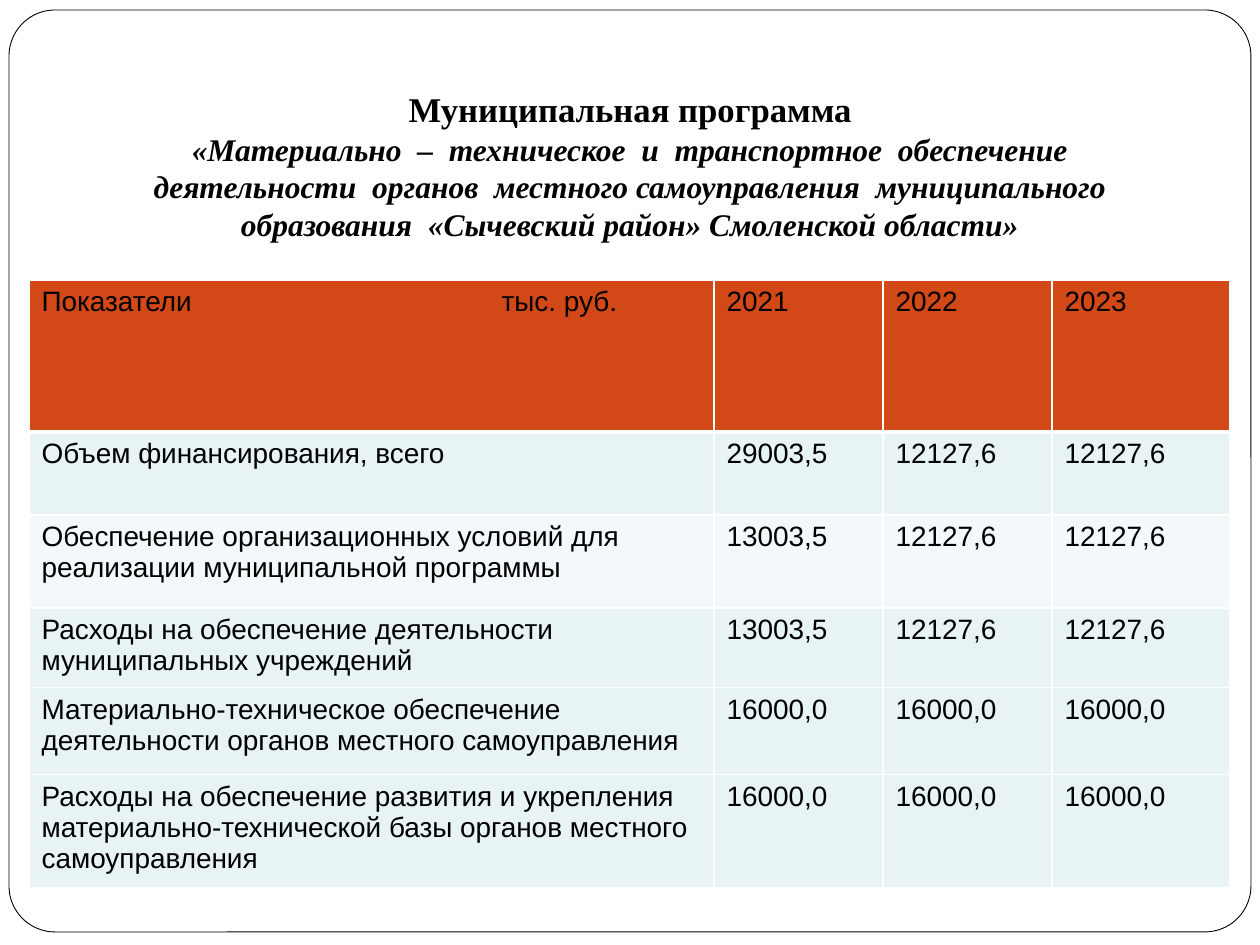
from lxml import etree
from pptx import Presentation
from pptx.dml.color import RGBColor
from pptx.enum.shapes import MSO_SHAPE
from pptx.enum.text import MSO_ANCHOR, PP_ALIGN
from pptx.oxml.ns import qn
from pptx.util import Emu, Pt

ROUNDED = MSO_SHAPE.ROUNDED_RECTANGLE
BOTTOM = MSO_ANCHOR.BOTTOM
CENTER = PP_ALIGN.CENTER

PX_PER_INCH = 126
BLACK = RGBColor(0x00, 0x00, 0x00)
WHITE = RGBColor(0xFF, 0xFF, 0xFF)
ORANGE = RGBColor(0xD3, 0x48, 0x17)
BAND = RGBColor(0xE7, 0xF3, 0xF4)
BAND_LIGHT = RGBColor(0xF3, 0xF9, 0xFA)

TITLE_LINES = [
    "Муниципальная программа",
    "«Материально  –  техническое  и  транспортное  обеспечение",
    "деятельности  органов  местного самоуправления  муниципального",
    "образования  «Сычевский район» Смоленской области»",
]

COLUMN_WIDTHS = [685, 169, 169, 178]
UNIT_TAB = 460
# Row height, fill, cell texts
BUDGET_ROWS = [
    (152, ORANGE, ["Показатели\tтыс. руб.", "2021", "2022", "2023"]),
    (83, BAND, ["Объем финансирования, всего",
                "29003,5", "12127,6", "12127,6"]),
    (93, BAND_LIGHT, ["Обеспечение организационных условий для реализации "
                      "муниципальной программы",
                      "13003,5", "12127,6", "12127,6"]),
    (79, BAND, ["Расходы на обеспечение деятельности муниципальных учреждений",
                "13003,5", "12127,6", "12127,6"]),
    (87, BAND, ["Материально-техническое обеспечение деятельности органов "
                "местного самоуправления",
                "16000,0", "16000,0", "16000,0"]),
    (108, BAND, ["Расходы на обеспечение развития и укрепления "
                 "материально-технической базы органов местного "
                 "самоуправления",
                 "16000,0", "16000,0", "16000,0"]),
]


def px(length):
    return Emu(round(length * 914400 / PX_PER_INCH))


def style_run(run, font_name, size, bold=False, italic=False):
    run.font.name = font_name
    run.font.size = Pt(size)
    run.font.bold = bold
    run.font.italic = italic
    run.font.color.rgb = BLACK


def add_frame(slide):
    frame = slide.shapes.add_shape(ROUNDED, px(9), px(10), px(1242), px(922))
    frame.adjustments[0] = 0.05
    frame.shadow.inherit = False
    frame.fill.solid()
    frame.fill.fore_color.rgb = WHITE
    frame.line.color.rgb = BLACK
    frame.line.width = Pt(0.5)


def add_title(slide):
    title = slide.shapes.add_textbox(px(63), px(38), px(1134), px(218))
    text_frame = title.text_frame
    text_frame.word_wrap = True
    text_frame.vertical_anchor = BOTTOM
    text_frame.margin_bottom = px(13)
    text_frame.text = "\n".join(TITLE_LINES)
    for index, paragraph in enumerate(text_frame.paragraphs):
        paragraph.alignment = CENTER
        is_subject = index > 0
        style_run(paragraph.runs[0], "Times New Roman",
                  18 if is_subject else 19.8, bold=True, italic=is_subject)


def set_borders(cell, widths):
    properties = cell._tc.get_or_add_tcPr()
    for position, (side, width) in enumerate(widths.items()):
        border = etree.Element(qn(f"a:{side}"), w=str(Pt(width)))
        fill = etree.SubElement(border, qn("a:solidFill"))
        etree.SubElement(fill, qn("a:srgbClr"), val=str(WHITE))
        properties.insert(position, border)


def add_tab_stop(paragraph, position):
    tabs = etree.SubElement(paragraph._p.get_or_add_pPr(), qn("a:tabLst"))
    etree.SubElement(tabs, qn("a:tab"), pos=str(px(position)), algn="l")


def add_budget_table(slide):
    heights = [height for height, _, _ in BUDGET_ROWS]
    table = slide.shapes.add_table(
        len(BUDGET_ROWS), len(COLUMN_WIDTHS), px(29), px(280),
        px(sum(COLUMN_WIDTHS)), px(sum(heights))).table
    for column, width in zip(table.columns, COLUMN_WIDTHS):
        column.width = px(width)
    for row_index, (height, fill, texts) in enumerate(BUDGET_ROWS):
        table.rows[row_index].height = px(height)
        # A thick rule separates the header from the figures
        borders = {"lnL": 1, "lnR": 1,
                   "lnT": 3 if row_index == 1 else 1,
                   "lnB": 3 if row_index == 0 else 1}
        for column_index, text in enumerate(texts):
            cell = table.cell(row_index, column_index)
            cell.text = text
            cell.fill.solid()
            cell.fill.fore_color.rgb = fill
            set_borders(cell, borders)
            style_run(cell.text_frame.paragraphs[0].runs[0], "Arial", 16)
    add_tab_stop(table.cell(0, 0).text_frame.paragraphs[0], UNIT_TAB)


def main():
    presentation = Presentation()
    presentation.slide_width = px(1260)
    presentation.slide_height = px(945)
    slide = presentation.slides.add_slide(presentation.slide_layouts[6])
    add_frame(slide)
    add_title(slide)
    add_budget_table(slide)
    presentation.save("out.pptx")


if __name__ == "__main__":
    main()
